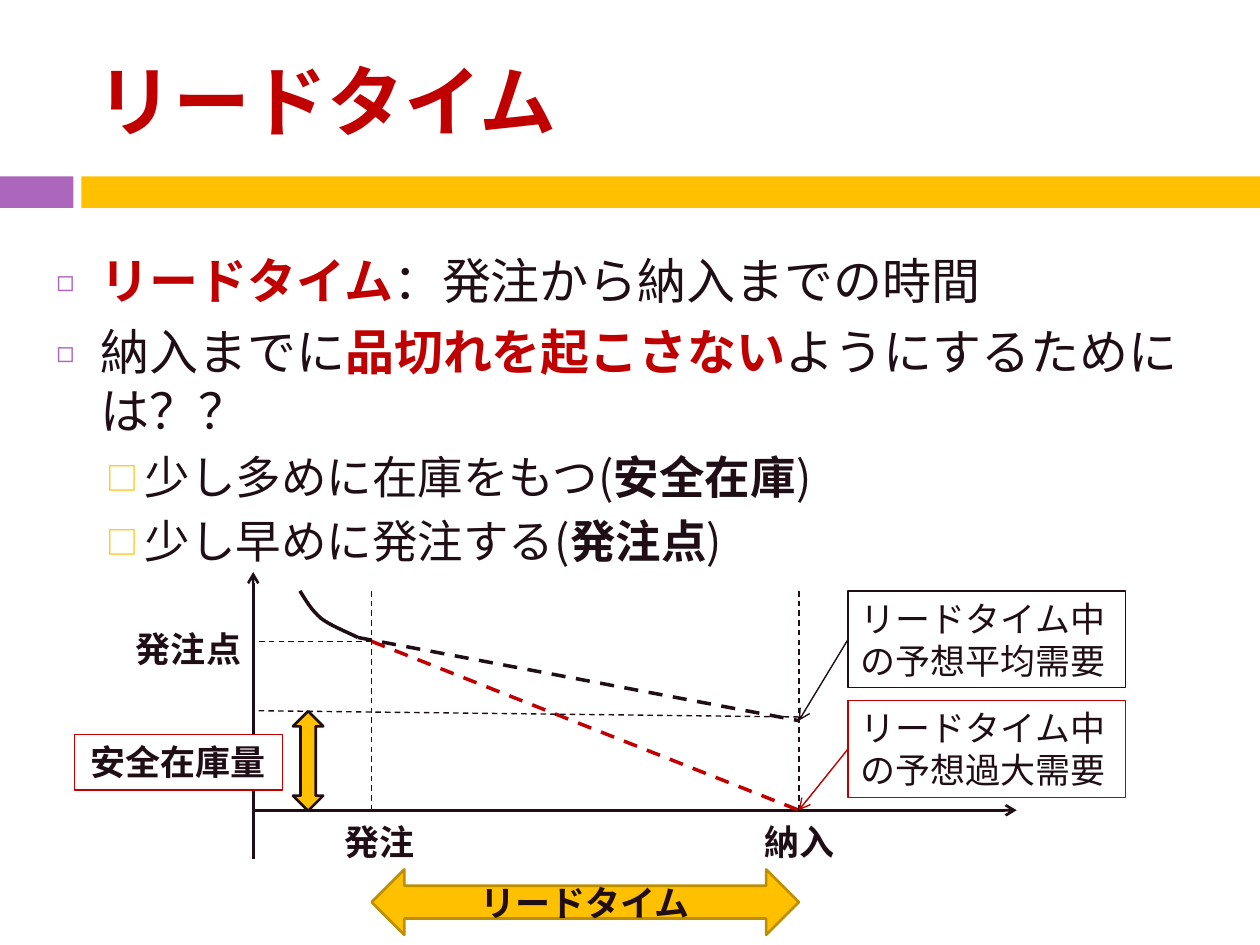
import pptx
import pptx.util
import pptx.dml.color
import pptx.enum.dml
import pptx.enum.shapes
import pptx.enum.text
import pptx.oxml
import pptx.oxml.ns
from dataclasses import dataclass
from lxml import etree

Pt = pptx.util.Pt
Shape = pptx.enum.shapes.MSO_SHAPE
Align = pptx.enum.text.PP_ALIGN
Anchor = pptx.enum.text.MSO_ANCHOR
qn = pptx.oxml.ns.qn


@dataclass
class Theme:
    font: str = "Noto Sans CJK JP"
    ink: str = "200E17"
    red: str = "C00000"
    gold: str = "FFC000"
    dark_gold: str = "BD8E00"
    purple: str = "AC66BB"
    white: str = "FFFFFF"
    title: float = 44
    body: float = 28
    detail: float = 26
    label: float = 20
    thin: float = 0.79
    axis: float = 1.5
    thick: float = 2


theme = Theme()
rgb = pptx.dml.color.RGBColor.from_string


def write(para, pieces, size):
    """Fill a paragraph with (text, colour, bold) pieces."""
    for text, color, bold in pieces:
        span = para.add_run()
        span.text = text
        span.font.name = theme.font
        span.font.size = Pt(size)
        span.font.bold = bold
        span.font.color.rgb = rgb(color)
        east_asian = etree.SubElement(span.font._element, qn("a:ea"))
        east_asian.set("typeface", theme.font)


def add_box(kind, left, top, width, height, fill=None, line=None, weight=0.75):
    """Add a preset shape, or a text box when kind is None."""
    frame = Pt(left), Pt(top), Pt(width), Pt(height)
    if kind is None:
        box = slide.shapes.add_textbox(*frame)
    else:
        box = slide.shapes.add_shape(kind, *frame)
        box.shadow.inherit = False
        if fill:
            box.fill.solid()
            box.fill.fore_color.rgb = rgb(fill)
        else:
            box.fill.background()
        if line:
            box.line.color.rgb = rgb(line)
            box.line.width = Pt(weight)
        else:
            box.line.fill.background()
    box.text_frame.word_wrap = True
    box.text_frame.vertical_anchor = Anchor.TOP
    return box


deck = pptx.Presentation()
deck.slide_width, deck.slide_height = Pt(720), Pt(540)
slide = deck.slides.add_slide(deck.slide_layouts[6])

# Header
add_box(Shape.RECTANGLE, 0, 100.8, 42, 18, theme.purple)
add_box(Shape.RECTANGLE, 46.5, 100.8, 673.5, 18, theme.gold)
title = add_box(None, 48, 18, 642, 78)
title.text_frame.vertical_anchor = Anchor.MIDDLE
write(title.text_frame.paragraphs[0], [("リードタイム", theme.red, True)], theme.title)

# Bulleted text
top_level = ("◻", theme.purple, 60, 25.2, 25.2, 7, theme.body)
sub_level = ("□", theme.gold, 70, 50.4, 21.6, 5.5, theme.detail)
points = [
    (top_level, [("リードタイム", theme.red, True),
                 ("：発注から納入までの時間", theme.ink, False)]),
    (top_level, [("納入までに", theme.ink, False),
                 ("品切れを起こさない", theme.red, True),
                 ("ようにするためには？？", theme.ink, False)]),
    (sub_level, [("少し多めに在庫をもつ(", theme.ink, False),
                 ("安全在庫", theme.ink, True), (")", theme.ink, False)]),
    (sub_level, [("少し早めに発注する(", theme.ink, False),
                 ("発注点", theme.ink, True), (")", theme.ink, False)]),
]
body = add_box(None, 25.2, 139.7, 674.6, 385).text_frame
for index, (level, pieces) in enumerate(points):
    bullet, color, percent, margin, hanging, before, size = level
    para = body.add_paragraph() if index else body.paragraphs[0]
    para.level = 1 if level is sub_level else 0
    para.space_before = Pt(before)
    write(para, pieces, size)
    props = para._p.get_or_add_pPr()
    props.set("marL", str(Pt(margin)))
    props.set("indent", str(-Pt(hanging)))
    bullet_color = etree.SubElement(props, qn("a:buClr"))
    etree.SubElement(bullet_color, qn("a:srgbClr")).set("val", color)
    etree.SubElement(props, qn("a:buSzPct")).set("val", str(percent * 1000))
    etree.SubElement(props, qn("a:buFont")).set("typeface", theme.font)
    etree.SubElement(props, qn("a:buChar")).set("char", bullet)

# Chart positions
axis_x, axis_y = 144.7, 463
order_x, delivery_x = 212.4, 456.5
plot_top, reorder_y = 337.7, 366.5
mean_end_y = 411.8

# Stock curve before the order, sampled from two cubic arcs
arcs = [
    [(171.4, 337.7), (175, 343.4), (177.8, 348.5), (183.6, 353.5)],
    [(183.6, 353.5), (189.4, 357.8), (197.3, 360.7), (204.5, 364.3)],
]
curve = [
    tuple(Pt((1 - t) ** 3 * a + 3 * (1 - t) ** 2 * t * b + 3 * (1 - t) * t ** 2 * c + t ** 3 * d)
          for a, b, c, d in zip(*arc))
    for arc in arcs for t in [step / 8 for step in range(9)]
]
builder = slide.shapes.build_freeform(*curve[0])
builder.add_line_segments(curve[1:], close=False)
stock = builder.convert_to_shape()
stock.shadow.inherit = False
stock.fill.background()
stock.line.color.rgb = rgb(theme.ink)
stock.line.width = Pt(theme.thick)

# Callouts
callouts = []
for top, text, color in [(plot_top, "リードタイム中の予想平均需要", theme.ink),
                         (400.3, "リードタイム中の予想過大需要", theme.red)]:
    box = add_box(Shape.RECTANGLE, 484.6, top, 158.4, 55.4, line=color)
    para = box.text_frame.paragraphs[0]
    para.alignment = Align.LEFT
    write(para, [(text, theme.ink, False)], theme.label)
    callouts.append(box)
mean_box, peak_box = callouts

# Axes, demand lines, guides and leaders
lines = [
    (axis_x, 491, axis_x, 326.9, theme.ink, theme.axis, "arrow", None),
    (axis_x, axis_y, 581, axis_y, theme.ink, theme.axis, "arrow", None),
    (204.5, 364.3, delivery_x, mean_end_y, theme.ink, theme.thick, "dash", None),
    (order_x, reorder_y, delivery_x, axis_y, theme.red, theme.thick, "dash", None),
    (delivery_x, plot_top, delivery_x, axis_y, theme.ink, theme.thin, "dash", None),
    (order_x, plot_top, order_x, axis_y, theme.ink, theme.thin, "dash", None),
    (order_x, reorder_y, axis_x, reorder_y, theme.ink, theme.thin, "dash", None),
    (delivery_x, 409.7, axis_x, 406.1, theme.ink, theme.thin, "dash", None),
    (484.6, 365.4, delivery_x, mean_end_y, theme.ink, theme.thin, "arrow", mean_box),
    (484.6, 428, delivery_x, axis_y, theme.red, theme.thin, "arrow", peak_box),
]
for x1, y1, x2, y2, color, weight, style, source in lines:
    line = slide.shapes.add_connector(
        pptx.enum.shapes.MSO_CONNECTOR.STRAIGHT, Pt(x1), Pt(y1), Pt(x2), Pt(y2))
    if source:
        line.begin_connect(source, 1)
    line.line.color.rgb = rgb(color)
    line.line.width = Pt(weight)
    if style == "dash":
        line.line.dash_style = pptx.enum.dml.MSO_LINE.DASH
    else:
        etree.SubElement(line.line._get_or_add_ln(), qn("a:tailEnd")).set("type", "arrow")
    etree.SubElement(line._element.spPr, qn("a:effectLst"))

# Labels
for text, left, top, width in [("発注点", 70.6, 355, 74.9),
                               ("発注", 190, 465.1, 54.7),
                               ("納入", 429.8, 465.1, 54.7)]:
    label = add_box(None, left, top, width, 31.7)
    label.text_frame.word_wrap = False
    write(label.text_frame.paragraphs[0], [(text, theme.ink, True)], theme.label)

safety = add_box(Shape.RECTANGLE, 42.5, 419.8, 118.8, 31.7, theme.white, theme.red)
safety_arrow = add_box(Shape.LEFT_RIGHT_ARROW, 147.6, 426.2, 56.9, 17.3,
                       theme.gold, theme.ink, theme.axis)
safety_arrow.rotation = 90
lead_time = add_box(Shape.LEFT_RIGHT_ARROW, order_x, 496.8, delivery_x - order_x, 37.4,
                    theme.gold, theme.dark_gold, theme.axis)
lead_time.text_frame.vertical_anchor = Anchor.MIDDLE
for box, text in [(safety, "安全在庫量"), (lead_time, "リードタイム")]:
    para = box.text_frame.paragraphs[0]
    para.alignment = Align.CENTER
    write(para, [(text, theme.ink, True)], theme.label)

deck.save("out.pptx")
